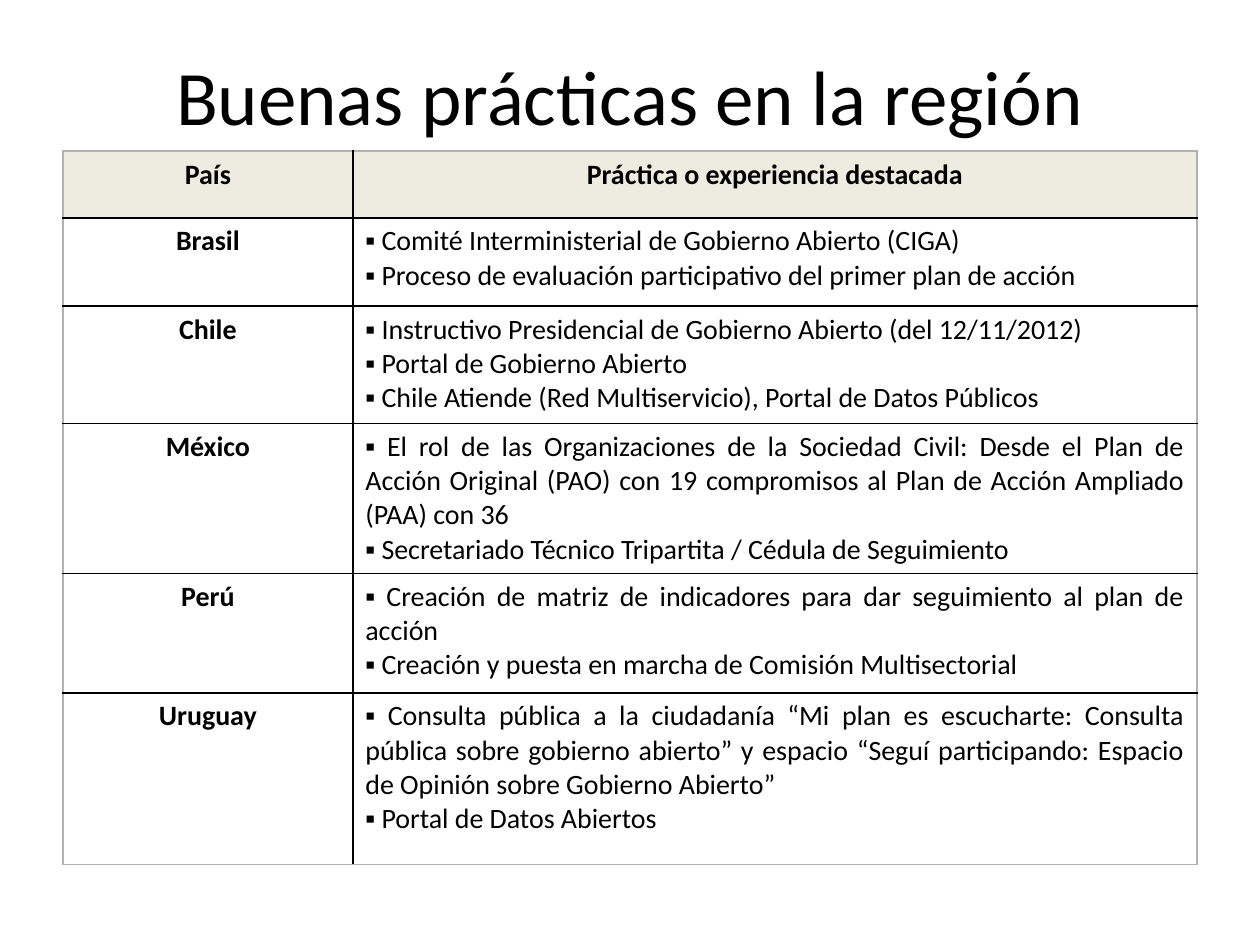
from lxml.etree import SubElement
from pptx import Presentation
from pptx.dml.color import RGBColor
from pptx.enum.text import MSO_ANCHOR, PP_ALIGN
from pptx.oxml.ns import qn
from pptx.util import Inches, Pt

# Content
TITLE = "Buenas prácticas en la región"
HEADERS = ("País", "Práctica o experiencia destacada")
PRACTICES = [
    ("Brasil", [
        "Comité Interministerial de Gobierno Abierto (CIGA)",
        "Proceso de evaluación participativo del primer plan de acción",
    ]),
    ("Chile", [
        "Instructivo Presidencial de Gobierno Abierto (del 12/11/2012)",
        "Portal de Gobierno Abierto",
        "Chile Atiende (Red Multiservicio), Portal de Datos Públicos",
    ]),
    ("México", [
        "El rol de las Organizaciones de la Sociedad Civil: Desde el Plan de "
        "Acción Original (PAO) con 19 compromisos al Plan de Acción Ampliado "
        "(PAA) con 36",
        "Secretariado Técnico Tripartita / Cédula de Seguimiento",
    ]),
    ("Perú", [
        "Creación de matriz de indicadores para dar seguimiento al plan de acción",
        "Creación y puesta en marcha de Comisión Multisectorial",
    ]),
    ("Uruguay", [
        "Consulta pública a la ciudadanía “Mi plan es escucharte: Consulta "
        "pública sobre gobierno abierto” y espacio “Seguí participando: Espacio "
        "de Opinión sobre Gobierno Abierto”",
        "Portal de Datos Abiertos",
    ]),
]

# Format
COLORS = {"text": "000000", "header": "EEECE1", "inner": "000000", "outer": "B2B2B2"}
TITLE_FONT = {"name": "Calibri", "size": Pt(44), "bold": False}
HEADING_FONT = {"name": "Calibri", "size": Pt(16), "bold": True}
BODY_FONT = {**HEADING_FONT, "bold": False}
COLUMN_WIDTHS = (2.3, 6.7)
ROW_HEIGHTS = (0.53, 0.7, 0.93, 1.19, 0.95, 1.36)


def write_paragraph(paragraph, text, font_format, alignment, bullet=None):
    paragraph.alignment = alignment
    if bullet:
        properties = paragraph._p.get_or_add_pPr()
        SubElement(properties, qn("a:buFont"), typeface="Calibri")
        SubElement(properties, qn("a:buChar"), char=bullet)
    run = paragraph.add_run()
    run.text = text
    for name, value in font_format.items():
        setattr(run.font, name, value)
    run.font.color.rgb = RGBColor.from_string(COLORS["text"])


def format_cell(cell, row, column):
    # Grey outer frame, black inner rules
    outer_edges = {
        "a:lnL": column == 0,
        "a:lnR": column == len(COLUMN_WIDTHS) - 1,
        "a:lnT": row == 0,
        "a:lnB": row == len(ROW_HEIGHTS) - 1,
    }
    properties = cell._tc.get_or_add_tcPr()
    for tag, is_outer in outer_edges.items():
        line = SubElement(properties, qn(tag), w=str(Pt(1)))
        fill = SubElement(line, qn("a:solidFill"))
        SubElement(fill, qn("a:srgbClr"), val=COLORS["outer" if is_outer else "inner"])
    if row == 0:
        cell.fill.solid()
        cell.fill.fore_color.rgb = RGBColor.from_string(COLORS["header"])
    else:
        cell.fill.background()


presentation = Presentation()
presentation.slide_width, presentation.slide_height = Inches(10), Inches(7.5)
slide = presentation.slides.add_slide(presentation.slide_layouts[5])

# Title
title = slide.shapes.title
title.left, title.top, title.width, title.height = map(Inches, (0.5, 0.3, 9, 0.9))
title.text_frame.vertical_anchor = MSO_ANCHOR.MIDDLE
write_paragraph(title.text_frame.paragraphs[0], TITLE, TITLE_FONT, PP_ALIGN.CENTER)

# Table grid
table = slide.shapes.add_table(
    len(ROW_HEIGHTS), len(COLUMN_WIDTHS), Inches(0.5), Inches(1.2),
    Inches(sum(COLUMN_WIDTHS)), Inches(sum(ROW_HEIGHTS))).table
table.horz_banding = False
for column, width in zip(table.columns, COLUMN_WIDTHS):
    column.width = Inches(width)
for row, height in zip(table.rows, ROW_HEIGHTS):
    row.height = Inches(height)
for row in range(len(ROW_HEIGHTS)):
    for column in range(len(COLUMN_WIDTHS)):
        format_cell(table.cell(row, column), row, column)

# Header and country names
headings = [(0, column, text) for column, text in enumerate(HEADERS)]
headings += [(row, 0, country) for row, (country, _) in enumerate(PRACTICES, 1)]
for row, column, text in headings:
    paragraph = table.cell(row, column).text_frame.paragraphs[0]
    write_paragraph(paragraph, text, HEADING_FONT, PP_ALIGN.CENTER)

# Practices of each country
for row, (_, practices) in enumerate(PRACTICES, 1):
    text_frame = table.cell(row, 1).text_frame
    for index, practice in enumerate(practices):
        paragraph = text_frame.add_paragraph() if index else text_frame.paragraphs[0]
        write_paragraph(paragraph, " " + practice, BODY_FONT, PP_ALIGN.JUSTIFY, "▪")

presentation.save("out.pptx")
